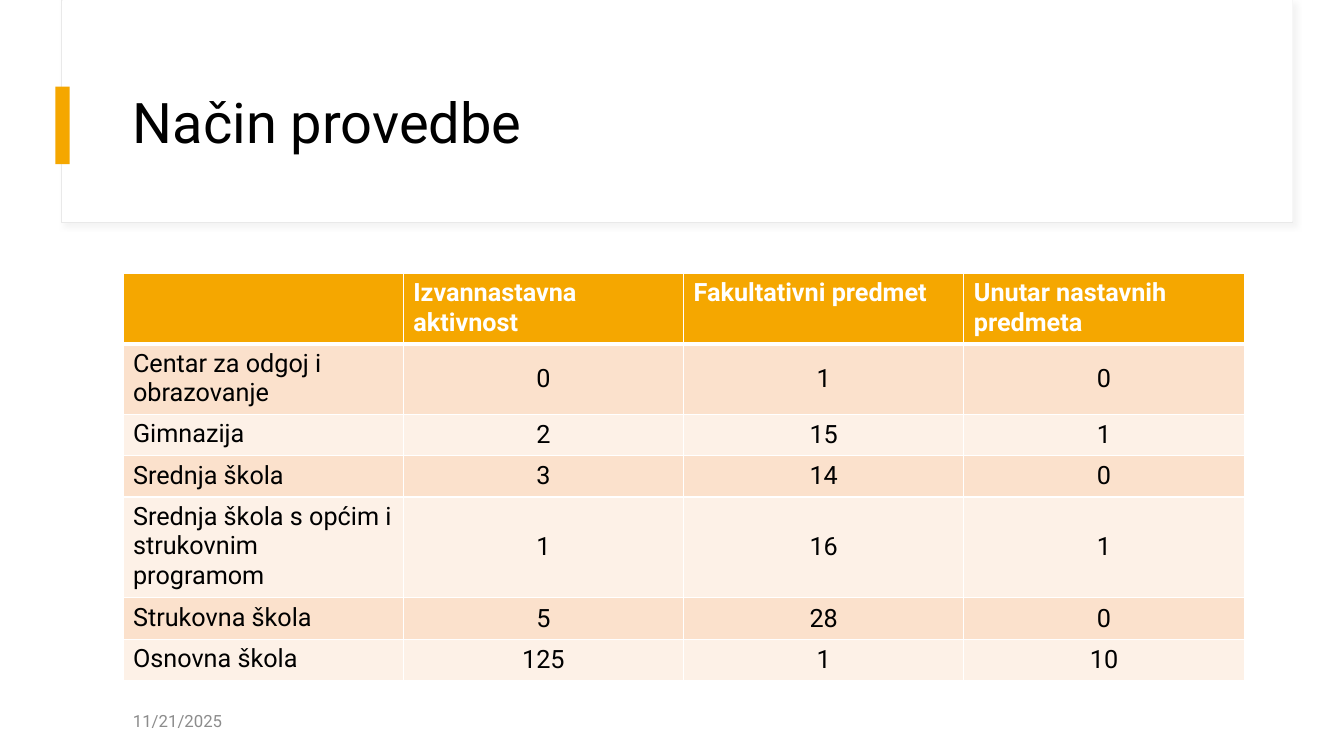
from lxml.etree import SubElement
from pptx import Presentation
from pptx.dml.color import RGBColor
from pptx.enum.shapes import MSO_SHAPE
from pptx.enum.text import MSO_ANCHOR, PP_ALIGN
from pptx.oxml import parse_xml
from pptx.oxml.ns import nsdecls, qn
from pptx.util import Inches, Pt

TITLE = "Način provedbe"
DATE = "11/21/2025"
ROWS = [
    ("", "Izvannastavna aktivnost", "Fakultativni predmet", "Unutar nastavnih predmeta"),
    ("Centar za odgoj i obrazovanje", 0, 1, 0),
    ("Gimnazija", 2, 15, 1),
    ("Srednja škola", 3, 14, 0),
    ("Srednja škola s općim i strukovnim programom", 1, 16, 1),
    ("Strukovna škola", 5, 28, 0),
    ("Osnovna škola", 125, 1, 10),
]

FONT = "Roboto"
WHITE = RGBColor(0xFF, 0xFF, 0xFF)
BLACK = RGBColor(0x00, 0x00, 0x00)
GREY = RGBColor(0x8C, 0x8C, 0x8C)
FRAME_GREY = RGBColor(0xE9, 0xE9, 0xE9)
SHADOW_GREY = RGBColor(0xD9, 0xD9, 0xD9)
ORANGE = RGBColor(0xF5, 0xA7, 0x00)
BAND_DARK = RGBColor(0xFB, 0xE1, 0xCC)
BAND_LIGHT = RGBColor(0xFD, 0xF1, 0xE7)

LEFT, WIDTH = 1.22, 11.12
ROW_HEIGHT = 0.41


def add_box(page, area, fill, line=None):
    box = page.shapes.add_shape(MSO_SHAPE.RECTANGLE, *map(Inches, area))
    box.shadow.inherit = False
    box.fill.solid()
    box.fill.fore_color.rgb = fill
    if line is None:
        box.line.fill.background()
    else:
        box.line.color.rgb = line
        box.line.width = Pt(0.75)
    return box


def add_shadow(box):
    effects = box._element.spPr.find(qn("a:effectLst"))
    effects.append(parse_xml(
        f'<a:outerShdw {nsdecls("a")} blurRad="{Pt(4)}" dist="{Pt(3)}" dir="2700000" '
        f'algn="tl" rotWithShape="0"><a:srgbClr val="{SHADOW_GREY}">'
        f'<a:alpha val="30000"/></a:srgbClr></a:outerShdw>'))


def style_text(para, size, color, bold=False):
    for span in para.runs:
        span.font.name = FONT
        span.font.size = Pt(size)
        span.font.bold = bold
        span.font.color.rgb = color


def add_text(page, area, text, size, color):
    box = page.shapes.add_textbox(*map(Inches, area))
    frame = box.text_frame
    frame.word_wrap = True
    frame.vertical_anchor = MSO_ANCHOR.MIDDLE
    frame.text = text
    style_text(frame.paragraphs[0], size, color)
    return frame.paragraphs[0]


def add_borders(cell, is_header):
    properties = cell._tc.get_or_add_tcPr()
    for side in ("L", "R", "T", "B"):
        width = 3 if is_header and side == "B" else 1
        border = SubElement(properties, qn(f"a:ln{side}"), w=str(Pt(width)))
        fill = SubElement(border, qn("a:solidFill"))
        SubElement(fill, qn("a:srgbClr"), val=str(WHITE))


def add_results_table(page):
    count = len(ROWS[0])
    table = page.shapes.add_table(
        len(ROWS), count, Inches(LEFT), Inches(2.71),
        Inches(WIDTH), Inches(ROW_HEIGHT * len(ROWS))).table
    for column in table.columns:
        column.width = Inches(WIDTH / count)
    for r, values in enumerate(ROWS):
        is_header = r == 0
        table.rows[r].height = Inches(ROW_HEIGHT)
        band = BAND_DARK if r % 2 else BAND_LIGHT
        for c, value in enumerate(values):
            cell = table.cell(r, c)
            add_borders(cell, is_header)
            cell.fill.solid()
            cell.fill.fore_color.rgb = ORANGE if is_header else band
            para = cell.text_frame.paragraphs[0]
            if value != "":
                para.text = str(value)
            style_text(para, 18, WHITE if is_header else BLACK, is_header)
            if c and not is_header:
                para.alignment = PP_ALIGN.CENTER
                cell.vertical_anchor = MSO_ANCHOR.MIDDLE


def main():
    deck = Presentation()
    deck.slide_width, deck.slide_height = Inches(13.33), Inches(7.5)
    page = deck.slides.add_slide(deck.slide_layouts[6])
    add_shadow(add_box(page, (0.61, 0, 12.21, 2.21), WHITE, FRAME_GREY))
    add_box(page, (0.62, 0, 12.2, 2.2), WHITE)
    add_box(page, (0.55, 0.86, 0.14, 0.77), ORANGE)
    title = add_text(page, (LEFT, 0.6, WIDTH, 1.29), TITLE, 40, BLACK)
    title.line_spacing = 0.9
    add_results_table(page)
    add_text(page, (LEFT, 6.95, 3, 0.4), DATE, 12, GREY)
    deck.save("out.pptx")


if __name__ == "__main__":
    main()
